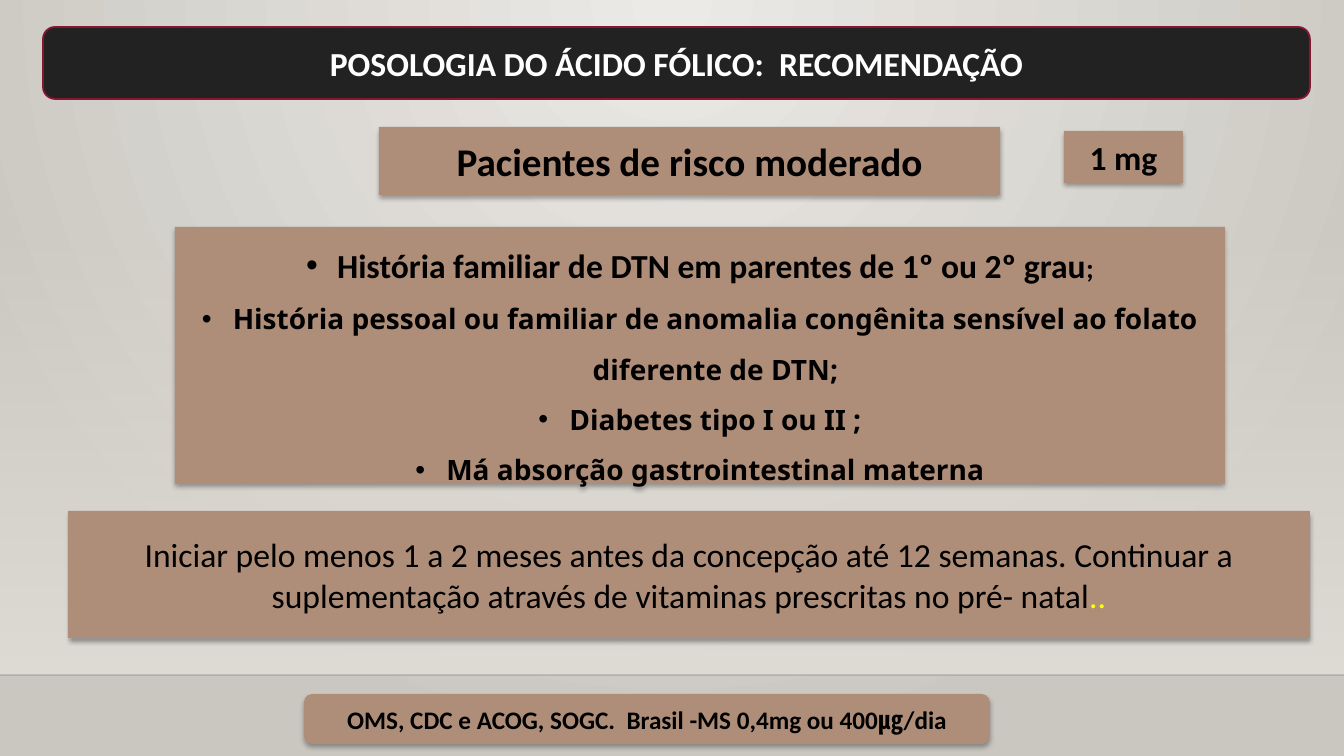
from lxml import etree
from pptx import Presentation
from pptx.dml.color import RGBColor
from pptx.enum.shapes import MSO_CONNECTOR, MSO_SHAPE
from pptx.enum.text import MSO_ANCHOR, PP_ALIGN
from pptx.oxml import parse_xml
from pptx.oxml.ns import qn
from pptx.util import Pt

RECTANGLE = MSO_SHAPE.RECTANGLE
ROUNDED = MSO_SHAPE.ROUNDED_RECTANGLE
STRAIGHT = MSO_CONNECTOR.STRAIGHT
MIDDLE = MSO_ANCHOR.MIDDLE
CENTER = PP_ALIGN.CENTER
PX = 914400 / 100.8
NAMESPACE = 'xmlns:a="http://schemas.openxmlformats.org/drawingml/2006/main"'
THEME = {
    "glow": "ECEAE7", "edge": "CAC7C1", "floor": "DFDBD5", "rule": "000001",
    "banner": "222222", "banner_line": "871631", "panel": "AF8E79",
    "black": "000000", "white": "FFFFFF", "yellow": "FFFF00",
    "font": "Calibri", "list_font": "Noto Sans",
    "heading": 28, "body": 24, "list": 20, "footer": 18,
}


def px(value):
    return round(value * PX)


def add_box(kind, box, fill, paragraphs):
    shape = slide.shapes.add_shape(kind, *map(px, box))
    shape.shadow.inherit = False
    shape.fill.solid()
    shape.fill.fore_color.rgb = RGBColor.from_string(THEME[fill])
    shape.line.fill.background()
    if fill == "panel":
        effects = shape._element.spPr.find(qn("a:effectLst"))
        effects.append(parse_xml(
            f'<a:outerShdw {NAMESPACE} blurRad="44450" dist="27940" dir="5400000" '
            f'algn="ctr" rotWithShape="0"><a:srgbClr val="{THEME["black"]}">'
            '<a:alpha val="32000"/></a:srgbClr></a:outerShdw>'))
    frame = shape.text_frame
    frame.word_wrap = True
    frame.vertical_anchor = MIDDLE
    frame.text = "\n".join("".join(run[0] for run in runs) for runs in paragraphs)
    for paragraph, runs in zip(frame.paragraphs, paragraphs):
        paragraph.alignment = CENTER
        paragraph.text = ""
        for text, size, color, bold, font in runs:
            run = paragraph.add_run()
            run.text = text
            run.font.size = Pt(THEME[size])
            run.font.color.rgb = RGBColor.from_string(THEME[color])
            run.font.bold = bold
            run.font.name = THEME[font]
    return shape


presentation = Presentation()
presentation.slide_width = px(1344)
presentation.slide_height = px(756)
slide = presentation.slides.add_slide(presentation.slide_layouts[6])

slide.background.fill.gradient()
for stop, name in zip(slide.background.fill.gradient_stops, ("glow", "edge")):
    stop.color.rgb = RGBColor.from_string(THEME[name])
    stop.position = 0 if name == "glow" else 1
gradient = slide.background._cSld.find(".//" + qn("a:gradFill"))
gradient.replace(gradient.find(qn("a:lin")), parse_xml(
    f'<a:path {NAMESPACE} path="circle">'
    '<a:fillToRect l="43000" t="0" r="43000" b="100000"/></a:path>'))

floor = add_box(RECTANGLE, (0, 223, 1344, 452), "floor", [])
floor.fill.gradient()
floor.fill.gradient_angle = 270
for position, stop in enumerate(floor.fill.gradient_stops):
    stop.color.rgb = RGBColor.from_string(THEME["floor"])
    stop.position = position
first_color = floor._element.spPr.find(".//" + qn("a:srgbClr"))
etree.SubElement(first_color, qn("a:alpha"), val="0")

rule = slide.shapes.add_connector(STRAIGHT, 0, px(675), px(1344), px(675))
rule.line.width = Pt(1)
rule.line.color.rgb = RGBColor.from_string(THEME["rule"])
rule_color = rule._element.spPr.find(".//" + qn("a:srgbClr"))
etree.SubElement(rule_color, qn("a:alpha"), val="20000")
etree.SubElement(rule._element.spPr, qn("a:effectLst"))

banner = add_box(ROUNDED, (43, 27, 1267, 72), "banner", [
    [("POSOLOGIA DO ÁCIDO FÓLICO:  RECOMENDAÇÃO", "body", "white", True, "font")]])
banner.line.width = Pt(1.25)
banner.line.color.rgb = RGBColor.from_string(THEME["banner_line"])

add_box(ROUNDED, (304, 694, 686, 50), "panel", [
    [("OMS, CDC e ACOG, SOGC.  Brasil -MS 0,4mg ou 400㎍/dia",
      "footer", "black", True, "font")]])
add_box(RECTANGLE, (379, 127, 621, 68), "panel", [
    [("Pacientes de risco moderado", "heading", "black", True, "font")]])

risk_list = add_box(RECTANGLE, (175, 227, 1050, 257), "panel", [
    [("História familiar de DTN em parentes de 1º ou 2º grau", "body", "black", True, "font"),
     (";", "list", "black", True, "font")],
    *[[(text, "list", "black", True, "list_font")] for text in (
        "História pessoal ou familiar de anomalia congênita sensível ao folato diferente de\u00a0DTN;",
        "Diabetes\u00a0tipo I ou II\u00a0;",
        "Má absorção\u00a0gastrointestinal materna")]])
for paragraph in risk_list.text_frame.paragraphs:
    paragraph.line_spacing = 1.5
    properties = paragraph._p.get_or_add_pPr()
    properties.set("marL", str(px(31)))
    properties.set("indent", str(px(-31)))
    etree.SubElement(properties, qn("a:buFont"), typeface="Arial")
    etree.SubElement(properties, qn("a:buChar"), char="•")

add_box(RECTANGLE, (68, 511, 1242, 127), "panel", [
    [("Iniciar pelo menos 1 a 2 meses antes da concepção até 12 semanas. Continuar a "
      "suplementação através de vitaminas prescritas no pré- natal",
      "body", "black", False, "font"),
     ("..", "body", "yellow", False, "font")]])
add_box(RECTANGLE, (1064, 131, 119, 52), "panel", [
    [("1 mg", "body", "black", True, "font")]])

presentation.save("out.pptx")
